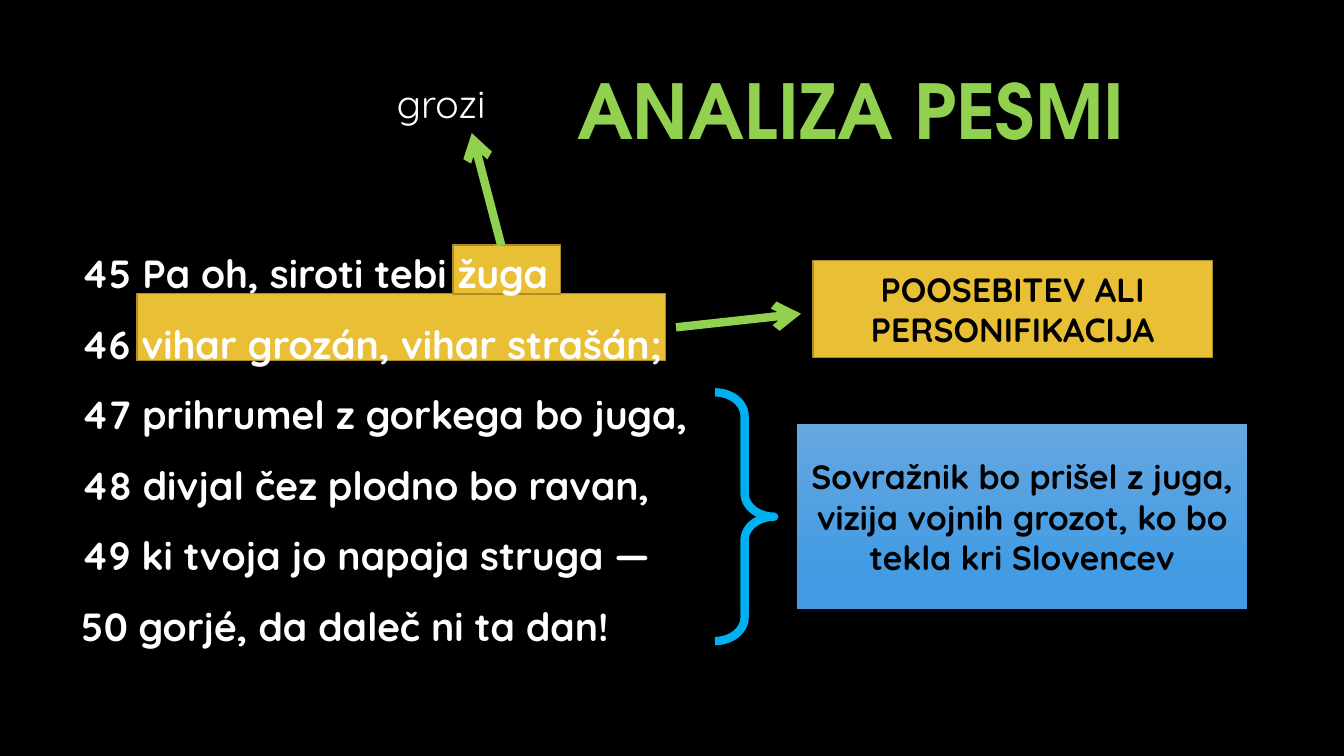
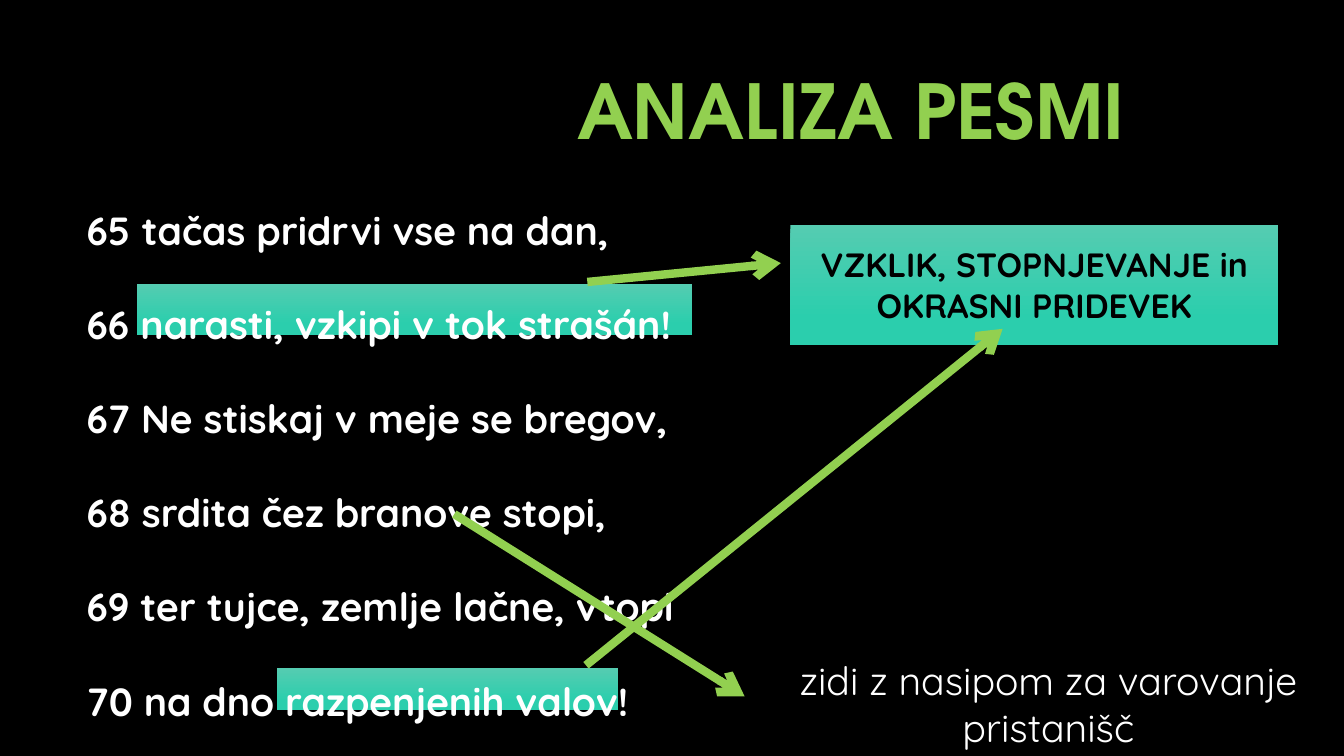
from dataclasses import dataclass
from typing import Optional

from lxml.etree import SubElement
from pptx import Presentation
from pptx.dml.color import RGBColor
from pptx.enum.shapes import MSO_CONNECTOR as CONN, MSO_SHAPE as SHAPE
from pptx.enum.text import MSO_ANCHOR as ANCHOR, MSO_AUTO_SIZE as FIT, PP_ALIGN as ALIGN
from pptx.oxml.ns import qn
from pptx.util import Inches, Pt

# Shared look
WIDTH, HEIGHT = Inches(13.33), Inches(7.5)
TITLE_ONLY = 5
BLACK = RGBColor(0x00, 0x00, 0x00)
WHITE = RGBColor(0xFF, 0xFF, 0xFF)
GREEN = RGBColor(0x92, 0xD0, 0x50)
CYAN = RGBColor(0x00, 0xB0, 0xF0)
GOLD = RGBColor(0xE9, 0xBF, 0x35)
GOLD_EDGE = RGBColor(0xAC, 0x8D, 0x27)
BLUES = (RGBColor(0x66, 0xA7, 0xE0), RGBColor(0x43, 0x9C, 0xE3))
TEALS = (RGBColor(0x55, 0xCC, 0xB1), RGBColor(0x2B, 0xCE, 0xAD))
STOPS = (0, 0.78)
STROKE = Pt(6)

TITLE = "ANALIZA PESMI"
TITLE_FONT = dict(name="TeX Gyre Adventor", size=Pt(54), bold=True, color=GREEN)
VERSE_FONT = dict(name="Quicksand", size=Pt(28), bold=True, color=WHITE)
NOTE_FONT = dict(VERSE_FONT, bold=False)
LABEL_FONT = dict(VERSE_FONT, size=Pt(24), color=BLACK)


# Places are percentages of the slide's width and height
@dataclass(frozen=True)
class Area:
    x: float
    y: float
    w: float
    h: float

    def box(self) -> tuple:
        return (*point(self.x, self.y), *point(self.w, self.h))


@dataclass(frozen=True)
class Block:
    area: Area
    colors: tuple
    edge: Optional[RGBColor] = None
    text: str = ""


@dataclass(frozen=True)
class Passage:
    area: Area
    lines: tuple
    font: dict
    spacing: float = 1.0
    align: ALIGN = ALIGN.LEFT


@dataclass(frozen=True)
class Arrow:
    start: tuple
    end: tuple


@dataclass(frozen=True)
class Page:
    highlights: tuple
    passages: tuple
    callouts: tuple
    arrows: tuple
    brace: Optional[Area] = None


TITLE_AREA = Area(31.1, 9.2, 64.4, 18.8)

PAGES = (
    Page(
        highlights=(
            Block(Area(10.2, 38.8, 39.3, 8.9), (GOLD,), GOLD_EDGE),
            Block(Area(33.7, 32.4, 8, 6.5), (GOLD,), GOLD_EDGE),
        ),
        passages=(
            Passage(Area(5.3, 29.2, 51.1, 57.3), (
                "45 Pa oh, siroti tebi žuga",
                "46 vihar grozán, vihar strašán;",
                "47 prihrumel z gorkega bo juga,",
                "48 divjal čez plodno bo ravan,",
                "49 ki tvoja jo napaja struga —",
                "50 gorjé, da daleč ni ta dan!",
            ), VERSE_FONT, 1.5),
            Passage(Area(28.8, 9.9, 12.5, 7.6), ("grozi",), NOTE_FONT),
        ),
        callouts=(
            Block(Area(60.5, 34.5, 29.7, 12.8), (GOLD,), GOLD_EDGE,
                  "POOSEBITEV ALI PERSONIFIKACIJA"),
            Block(Area(59.3, 56.1, 33.5, 24.5), BLUES, None,
                  "Sovražnik bo prišel z juga, vizija vojnih grozot, "
                  "ko bo tekla kri Slovencev"),
        ),
        arrows=(
            Arrow((37.3, 32.5), (35.1, 17.6)),
            Arrow((50.3, 43.3), (59.6, 41.5)),
        ),
        brace=Area(53.2, 51.9, 4.4, 32.9),
    ),
    Page(
        highlights=(
            Block(Area(20.6, 88.4, 25.4, 5.5), TEALS),
            Block(Area(10.2, 37.5, 41.3, 6.8), TEALS),
        ),
        passages=(
            Passage(Area(5.7, 20.4, 45.5, 76), (
                "65 tačas pridrvi vse na dan,",
                "66 narasti, vzkipi v tok strašán!",
                "67 Ne stiskaj v meje se bregov,",
                "68 srdita čez branove stopi,",
                "69 ter tujce, zemlje lačne, vtopi",
                "70 na dno razpenjenih valov!",
            ), VERSE_FONT, 2.0),
            Passage(Area(56, 86.1, 44, 13.9),
                    ("zidi z nasipom za varovanje pristanišč",),
                    NOTE_FONT, align=ALIGN.CENTER),
        ),
        callouts=(
            Block(Area(58.8, 29.7, 36.3, 15.9), TEALS, None,
                  "VZKLIK, STOPNJEVANJE in OKRASNI PRIDEVEK"),
        ),
        arrows=(
            Arrow((33.8, 68), (55.4, 92.1)),
            Arrow((43.6, 88), (74.6, 43.5)),
            Arrow((43.7, 37.3), (58.1, 34.8)),
        ),
    ),
)


def point(x: float, y: float) -> tuple:
    return round(WIDTH * x / 100), round(HEIGHT * y / 100)


# Text
def write(tf, lines: tuple, font: dict, spacing: float = 1.0,
          align: ALIGN = ALIGN.CENTER, anchor: ANCHOR = ANCHOR.TOP) -> None:
    for key, value in dict(word_wrap=True, auto_size=FIT.NONE,
                           vertical_anchor=anchor).items():
        setattr(tf, key, value)
    for i, line in enumerate(lines):
        p = tf.add_paragraph() if i else tf.paragraphs[0]
        p.alignment, p.line_spacing = align, spacing
        r = p.add_run()
        r.text = line
        for key, value in font.items():
            if key == "color":
                r.font.color.rgb = value
            else:
                setattr(r.font, key, value)


def add_title(s) -> None:
    sp = s.shapes.title
    sp.left, sp.top, sp.width, sp.height = TITLE_AREA.box()
    write(sp.text_frame, (TITLE,), TITLE_FONT, 0.9)


def add_passage(s, passage: Passage) -> None:
    sp = s.shapes.add_textbox(*passage.area.box())
    write(sp.text_frame, passage.lines, passage.font, passage.spacing, passage.align)


# Shapes
def add_block(s, block: Block) -> None:
    sp = s.shapes.add_shape(SHAPE.RECTANGLE, *block.area.box())
    sp.shadow.inherit = False
    if len(block.colors) == 1:
        sp.fill.solid()
        sp.fill.fore_color.rgb = block.colors[0]
    else:
        sp.fill.gradient()
        sp.fill.gradient_angle = 270
        for stop, color, position in zip(sp.fill.gradient_stops, block.colors, STOPS):
            stop.color.rgb, stop.position = color, position
    if block.edge is None:
        sp.line.fill.background()
    else:
        sp.line.color.rgb, sp.line.width = block.edge, Pt(1)
    if block.text:
        write(sp.text_frame, (block.text,), LABEL_FONT, anchor=ANCHOR.MIDDLE)


def add_brace(s, area: Area) -> None:
    sp = s.shapes.add_shape(SHAPE.RIGHT_BRACE, *area.box())
    sp.shadow.inherit = False
    sp.adjustments[0], sp.adjustments[1] = 0.4, 0.5
    sp.fill.background()
    sp.line.color.rgb, sp.line.width = CYAN, STROKE


def add_arrow(s, arrow: Arrow) -> None:
    cx = s.shapes.add_connector(CONN.STRAIGHT, *point(*arrow.start), *point(*arrow.end))
    cx.line.color.rgb, cx.line.width = GREEN, STROKE
    sp_pr = cx._element.spPr
    SubElement(sp_pr.find(qn("a:ln")), qn("a:tailEnd"), type="arrow")
    SubElement(sp_pr, qn("a:effectLst"))


# Slides
def add_page(prs, page: Page) -> None:
    s = prs.slides.add_slide(prs.slide_layouts[TITLE_ONLY])
    add_title(s)
    for block in page.highlights:
        add_block(s, block)
    for passage in page.passages:
        add_passage(s, passage)
    for block in page.callouts:
        add_block(s, block)
    if page.brace:
        add_brace(s, page.brace)
    for arrow in page.arrows:
        add_arrow(s, arrow)


def main() -> None:
    prs = Presentation()
    prs.slide_width, prs.slide_height = WIDTH, HEIGHT
    fill = prs.slide_master.background.fill
    fill.solid()
    fill.fore_color.rgb = BLACK
    for page in PAGES:
        add_page(prs, page)
    prs.save("out.pptx")


if __name__ == "__main__":
    main()
